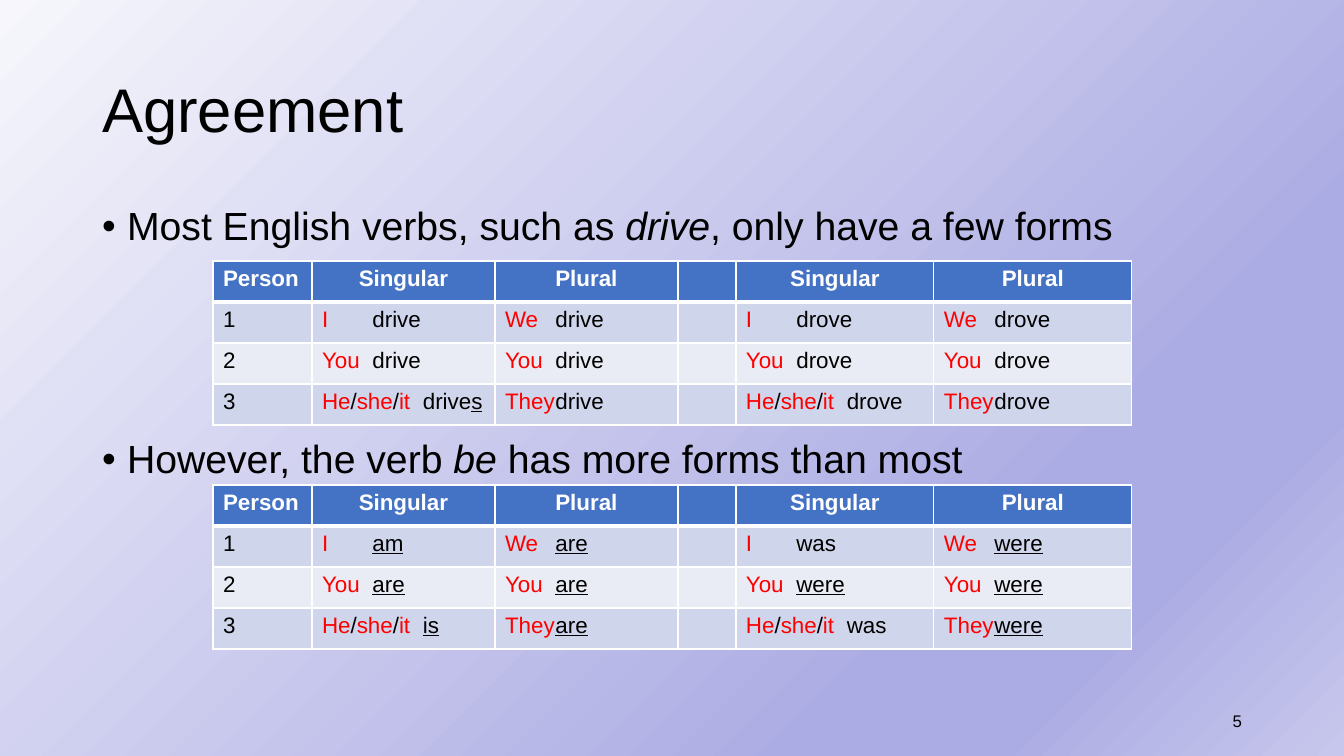
import copy

import pptx
import pptx.dml.color
import pptx.enum.text
import pptx.oxml
import pptx.oxml.ns
import pptx.util
import lxml.etree

RGB = pptx.dml.color.RGBColor
ALIGN = pptx.enum.text.PP_ALIGN
ANCHOR = pptx.enum.text.MSO_ANCHOR
qn = pptx.oxml.ns.qn

BLACK = RGB(0x00, 0x00, 0x00)
WHITE = RGB(0xFF, 0xFF, 0xFF)
RED = RGB(0xFF, 0x00, 0x00)
HEADER_BLUE = RGB(0x44, 0x72, 0xC4)
BANDS = [RGB(0xCF, 0xD5, 0xEA), RGB(0xE9, 0xEB, 0xF5)]
BACKGROUND_STOPS = [
    (0, RGB(0xF6, 0xF6, 0xFC)),
    (0.74, RGB(0xAC, 0xAC, 0xE4)),
    (0.83, RGB(0xAC, 0xAC, 0xE4)),
    (1, RGB(0xC7, 0xC7, 0xED)),
]

TITLE = "Agreement"
PAGE_NUMBER = "5"
# Each bullet: text before the verb, the verb, text after it, points above
BULLETS = [
    ("Most English verbs, such as ", "drive", ", only have a few forms", 10),
    ("However, the verb ", "be", " has more forms than most", 136),
]
HEADER = ["Person", "Singular", "Plural", "", "Singular", "Plural"]
SINGULAR = ["I", "You", "He/she/it"]
PLURAL = ["We", "You", "They"]
# One row per person, one form per pronoun column; what follows | is underlined
DRIVE_FORMS = [
    ("drive", "drive", "drove", "drove"),
    ("drive", "drive", "drove", "drove"),
    ("drive|s", "drive", "drove", "drove"),
]
BE_FORMS = [
    ("|am", "|are", "was", "|were"),
    ("|are", "|are", "|were", "|were"),
    ("|is", "|are", "was", "|were"),
]

# Lengths in px
PAGE_SIZE = (1344, 756)
TITLE_BOX = (92, 40, 1159, 146)
BODY_BOX = (92, 202, 1159, 480)
NUMBER_BOX = (950, 701, 302, 40)
TABLE_LEFT = 213
TABLES = [(261, DRIVE_FORMS), (485, BE_FORMS)]
COLUMN_WIDTHS = [99, 183, 183, 58, 198, 198]
ROW_HEIGHT = 41
BULLET_INDENT = 25


def px(length):
    return pptx.util.Emu(round(length * 9525 / 1.05))


def place(shape, box):
    shape.left, shape.top, shape.width, shape.height = map(px, box)


def add_span(para, text, size, color=BLACK, bold=False, italic=False, underline=False):
    span = para.add_run()
    span.text = text
    font = span.font
    font.name, font.size, font.color.rgb = "Arial", pptx.util.Pt(size), color
    font.bold, font.italic, font.underline = bold, italic, underline


def paint_background(page):
    fill = page.background.fill
    fill.gradient()
    fill.gradient_angle = 315
    stop_list = page.element.find(".//" + qn("a:gsLst"))
    while len(stop_list) < len(BACKGROUND_STOPS):
        stop_list.append(copy.deepcopy(stop_list[0]))
    for stop, (position, color) in zip(fill.gradient_stops, BACKGROUND_STOPS):
        stop.position, stop.color.rgb = position, color


def style_cell(cell, color, top, bottom):
    """Fill a cell and rule it in white; top and bottom are line widths in points."""
    properties = cell._tc.get_or_add_tcPr()
    for side, width in (("L", 1), ("R", 1), ("T", top), ("B", bottom)):
        line = lxml.etree.SubElement(properties, qn(f"a:ln{side}"), w=str(pptx.util.Pt(width)))
        fill = lxml.etree.SubElement(line, qn("a:solidFill"))
        lxml.etree.SubElement(fill, qn("a:srgbClr"), val=str(WHITE))
    cell.fill.solid()
    cell.fill.fore_color.rgb = color


def write_form(para, pronoun, form):
    """Write the pronoun in red with black slashes, then the verb form after a tab."""
    for index, word in enumerate(pronoun.split("/")):
        if index:
            add_span(para, "/", 16)
        add_span(para, word, 16, RED)
    plain, _, ending = form.partition("|")
    add_span(para, "\t" + plain, 16)
    if ending:
        add_span(para, ending, 16, underline=True)


def add_verb_table(page, top, forms):
    rows = len(forms) + 1
    frame = page.shapes.add_table(
        rows, len(HEADER), px(TABLE_LEFT), px(top),
        px(sum(COLUMN_WIDTHS)), px(ROW_HEIGHT * rows))
    table = frame.table
    for column, width in zip(table.columns, COLUMN_WIDTHS):
        column.width = px(width)
    for row in table.rows:
        row.height = px(ROW_HEIGHT)

    for column, heading in enumerate(HEADER):
        cell = table.cell(0, column)
        style_cell(cell, HEADER_BLUE, 1, 3)
        if heading:
            para = cell.text_frame.paragraphs[0]
            para.alignment = ALIGN.CENTER if column else ALIGN.LEFT
            add_span(para, heading, 16, WHITE, bold=True)

    for person, (singular, plural, row_forms) in enumerate(zip(SINGULAR, PLURAL, forms), 1):
        for column in range(len(HEADER)):
            style_cell(table.cell(person, column), BANDS[(person - 1) % 2],
                       3 if person == 1 else 1, 1)
        add_span(table.cell(person, 0).text_frame.paragraphs[0], str(person), 16)
        pronouns = (singular, plural, singular, plural)
        for column, pronoun, form in zip((1, 2, 4, 5), pronouns, row_forms):
            write_form(table.cell(person, column).text_frame.paragraphs[0], pronoun, form)


def write_title(title):
    place(title, TITLE_BOX)
    title.text_frame.vertical_anchor = ANCHOR.MIDDLE
    para = title.text_frame.paragraphs[0]
    para.alignment, para.line_spacing = ALIGN.LEFT, 0.9
    add_span(para, TITLE, 44)


def write_bullets(body):
    place(body, BODY_BOX)
    frame = body.text_frame
    frame.auto_size = pptx.enum.text.MSO_AUTO_SIZE.NONE
    for index, (before, verb, after, space) in enumerate(BULLETS):
        para = frame.add_paragraph() if index else frame.paragraphs[0]
        para.line_spacing, para.space_before = 0.9, pptx.util.Pt(space)
        properties = para._p.get_or_add_pPr()
        properties.set("marL", str(px(BULLET_INDENT)))
        properties.set("indent", str(-px(BULLET_INDENT)))
        add_span(para, before, 28)
        add_span(para, verb, 28, italic=True)
        add_span(para, after, 28)


def add_page_number(page):
    box = page.shapes.add_textbox(*map(px, NUMBER_BOX))
    box.text_frame.word_wrap = True
    box.text_frame.vertical_anchor = ANCHOR.MIDDLE
    para = box.text_frame.paragraphs[0]
    para.alignment = ALIGN.RIGHT
    add_span(para, PAGE_NUMBER, 12)


def main():
    deck = pptx.Presentation()
    deck.slide_width, deck.slide_height = map(px, PAGE_SIZE)
    page = deck.slides.add_slide(deck.slide_layouts[1])
    paint_background(page)
    write_title(page.shapes.title)
    write_bullets(page.placeholders[1])
    add_page_number(page)
    for top, forms in TABLES:
        add_verb_table(page, top, forms)
    deck.save("out.pptx")


if __name__ == "__main__":
    main()
